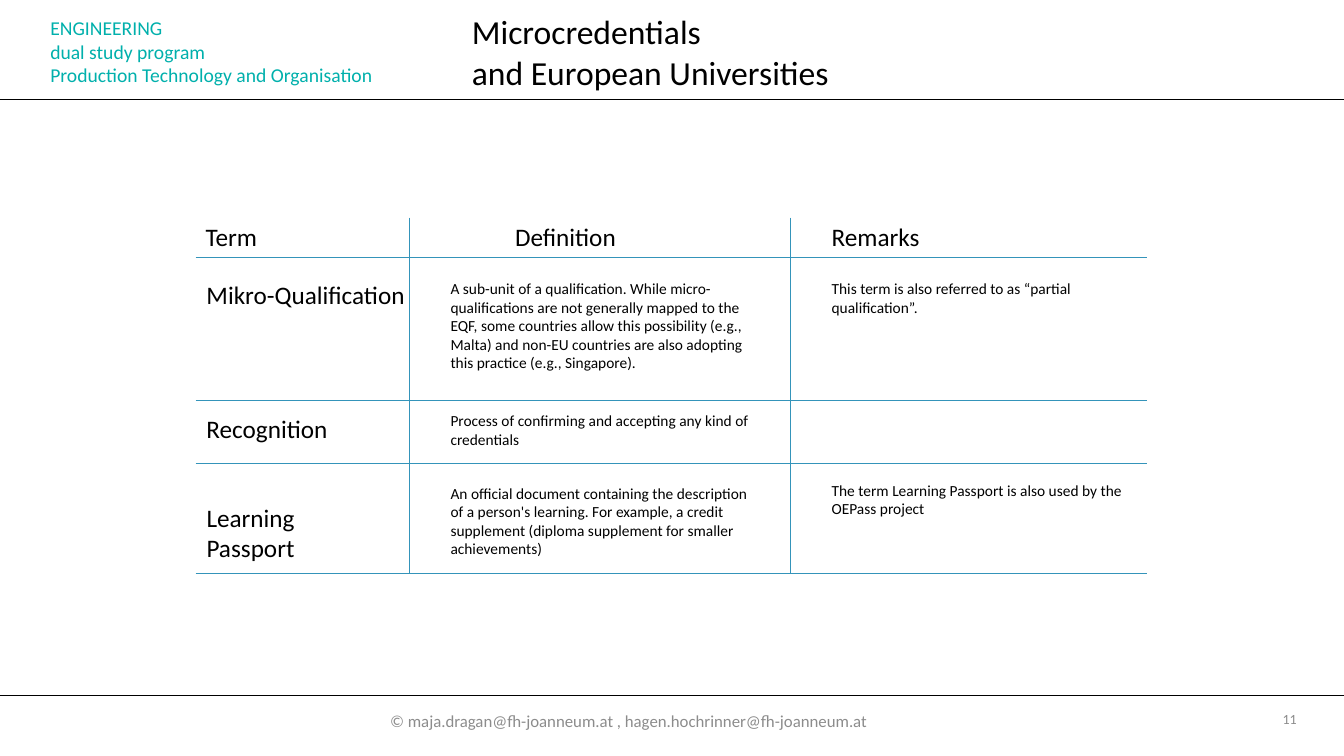
from dataclasses import dataclass

from lxml import etree
from pptx import Presentation
from pptx import util as u
from pptx.dml.color import RGBColor
from pptx.enum import shapes, text
from pptx.oxml.ns import qn

TITLE = ["Microcredentials", "and European Universities"]
PROGRAM = ["ENGINEERING", "dual study program", "Production Technology and Organisation"]
FOOTER = "© maja.dragan@fh-joanneum.at , hagen.hochrinner@fh-joanneum.at"
PAGE = "11"

# Headings: text, indent from the left edge of the column
HEADINGS = [("Term", 0), ("Definition", 0.95), ("Remarks", 0.31)]
# Rows of cells: text, drop below the rule above
ROWS = [
    [("Mikro-Qualification", 0.17),
     ("A sub-unit of a qualification. While micro-qualifications are not generally mapped "
      "to the EQF, some countries allow this possibility (e.g., Malta) and non-EU countries "
      "are also adopting this practice (e.g., Singapore).", 0.17),
     ("This term is also referred to as “partial qualification”.", 0.17)],
    [("Recognition", 0.08),
     ("Process of confirming and accepting any kind of credentials", 0.06)],
    [("Learning Passport", 0.33),
     ("An official document containing the description of a person's learning. For example, "
      "a credit supplement (diploma supplement for smaller achievements)", 0.15),
     ("The term Learning Passport is also used by the OEPass project", 0.12)],
]


@dataclass(frozen=True)
class Theme:
    font: str = "Calibri"
    ink: str = "000000"
    teal: str = "00B0AC"
    grey: str = "8C8C8C"
    grid: str = "3494BA"
    title: int = 24
    term: int = 18
    program: int = 14
    footer: int = 12
    definition: int = 11
    page: int = 10
    rule: float = 0.5


THEME = Theme()
WIDTH, HEIGHT = 13.33, 7.5
GRID_TOP = 2.16
COLUMNS = [1.94, 4.06, 7.84, 11.38]
RULES = [2.55, 3.97, 4.6, 5.69]
CELL_INDENTS = [0.01, 0.31, 0.31]
CELL_WIDTHS = [2.2, 3.17, 3.17]
PASSPORT_WIDTH = 1.85
HEADER_RULE, FOOTER_RULE = 0.99, 6.9


def fill_text(shape, lines, size, color, align=text.PP_ALIGN.LEFT,
              anchor=text.MSO_ANCHOR.TOP):
    frame = shape.text_frame
    frame.word_wrap = True
    frame.auto_size = text.MSO_AUTO_SIZE.NONE
    frame.vertical_anchor = anchor
    frame.text = "\n".join(lines)
    for paragraph in frame.paragraphs:
        paragraph.alignment = align
        paragraph.font.name = THEME.font
        paragraph.font.size = u.Pt(size)
        paragraph.font.color.rgb = RGBColor.from_string(color)


def add_label(slide, box, lines, size, color=THEME.ink, **layout):
    shape = slide.shapes.add_textbox(*map(u.Inches, box))
    fill_text(shape, lines, size, color, **layout)


def add_rule(slide, start, end, color):
    line = slide.shapes.add_connector(
        shapes.MSO_CONNECTOR.STRAIGHT, *map(u.Inches, (*start, *end)))
    line.line.color.rgb = RGBColor.from_string(color)
    line.line.width = u.Pt(THEME.rule)
    etree.SubElement(line._element.spPr, qn("a:effectLst"))


def add_frame(slide):
    """Title, program name, footer and the two page-wide rules."""
    title = slide.shapes.title
    title.left, title.top, title.width, title.height = map(u.Inches, (4.58, 0.06, 4.72, 0.91))
    fill_text(title, TITLE, THEME.title, THEME.ink)
    for y in (HEADER_RULE, FOOTER_RULE):
        add_rule(slide, (0, y), (WIDTH, y), THEME.ink)
    add_label(slide, (0.4, 0.11, 3.98, 0.81), PROGRAM, THEME.program, THEME.teal)
    add_label(slide, (3.77, 6.95, 5.79, 0.4), [FOOTER], THEME.footer, THEME.grey,
              anchor=text.MSO_ANCHOR.MIDDLE)
    add_label(slide, (12.3, 6.93, 0.66, 0.4), [PAGE], THEME.page, THEME.grey,
              align=text.PP_ALIGN.RIGHT, anchor=text.MSO_ANCHOR.MIDDLE)


def add_glossary(slide):
    for y in RULES:
        add_rule(slide, (COLUMNS[0], y), (COLUMNS[-1], y), THEME.grid)
    for x in COLUMNS[1:-1]:
        add_rule(slide, (x, GRID_TOP), (x, RULES[-1]), THEME.grid)
    for x, (heading, indent) in zip(COLUMNS, HEADINGS):
        add_label(slide, (x + indent, 2.15, 1.22, 0.4), [heading], THEME.term)
    for rule, below, row in zip(RULES, RULES[1:], ROWS):
        for column, (content, drop) in enumerate(row):
            is_term = column == 0
            width = PASSPORT_WIDTH if content == "Learning Passport" else CELL_WIDTHS[column]
            box = (COLUMNS[column] + CELL_INDENTS[column], rule + drop,
                   width, below - rule - drop)
            add_label(slide, box, [content], THEME.term if is_term else THEME.definition)


def main():
    presentation = Presentation()
    presentation.slide_width = u.Inches(WIDTH)
    presentation.slide_height = u.Inches(HEIGHT)
    slide = presentation.slides.add_slide(presentation.slide_layouts[5])
    add_frame(slide)
    add_glossary(slide)
    presentation.save("out.pptx")


if __name__ == "__main__":
    main()
